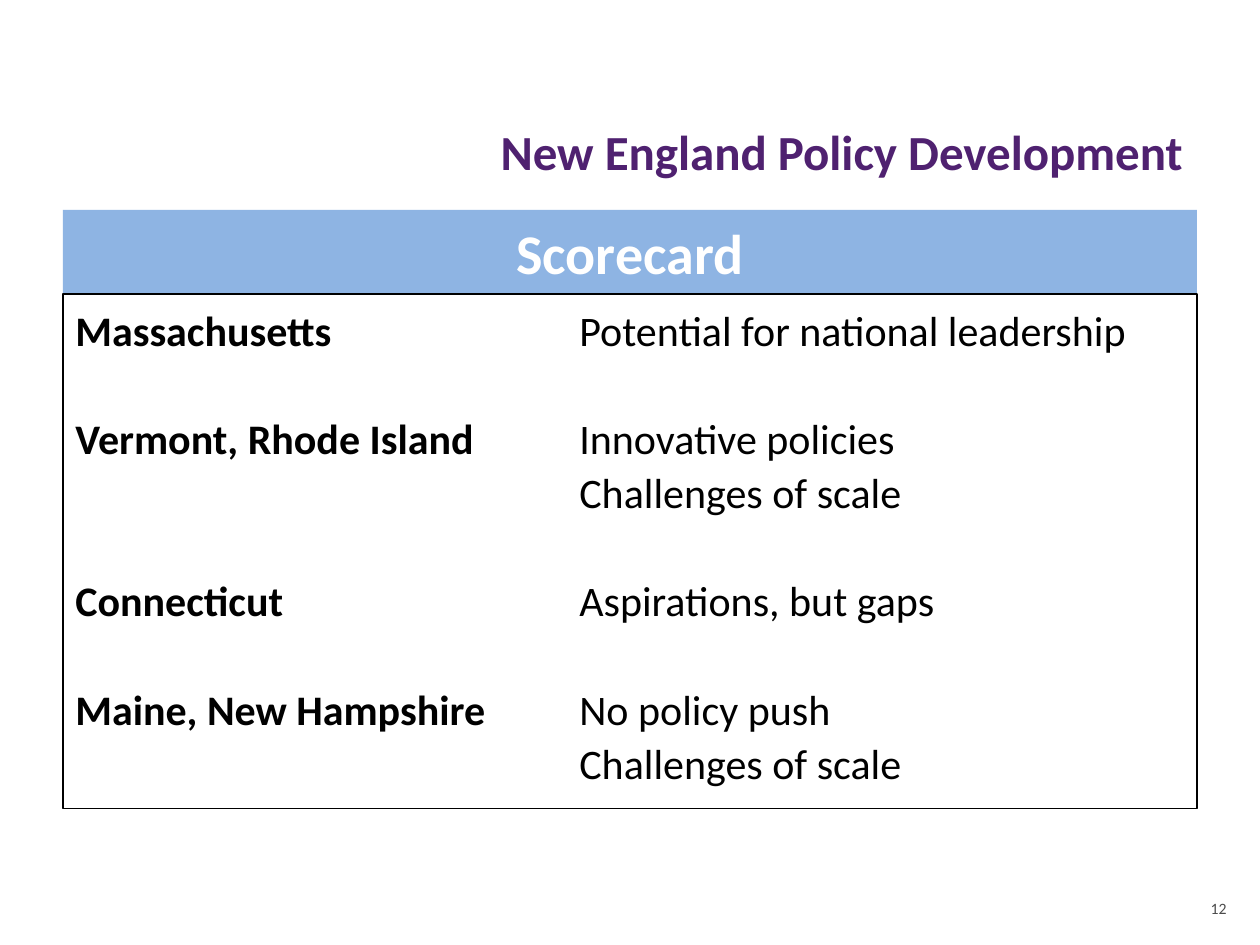
from dataclasses import dataclass

from lxml import etree
from pptx import Presentation
from pptx import util as u
from pptx.dml.color import RGBColor
from pptx.enum import shapes, text
from pptx.oxml.ns import qn

PURPLE = RGBColor(0x4F, 0x21, 0x70)
BLUE = RGBColor(0x8E, 0xB4, 0xE3)
WHITE = RGBColor(0xFF, 0xFF, 0xFF)
BLACK = RGBColor(0x00, 0x00, 0x00)
GREY = RGBColor(0x4C, 0x4C, 0x4C)

FONT = "Calibri"
CELL = u.Inches(1 / 12)
COLUMNS, ROWS = 120, 90
LINE_GAP = 2
GROUP_GAP = 33.2
VERDICT_TAB = u.Inches(4)


@dataclass(frozen=True)
class Area:
    column: float
    row: float
    columns: float
    rows: float

    def lengths(self) -> list[int]:
        return [round(n * CELL) for n in (self.column, self.row, self.columns, self.rows)]


@dataclass(frozen=True)
class Label:
    words: str
    area: Area
    size: float
    color: RGBColor
    align: text.PP_ALIGN
    bold: bool = False
    anchor: text.MSO_ANCHOR = text.MSO_ANCHOR.TOP
    fill: RGBColor | None = None


@dataclass(frozen=True)
class Score:
    states: str
    verdicts: tuple[str, ...]


LABELS = (
    Label("New England Policy Development", Area(13, 11, 100.8, 6), 28, PURPLE,
          text.PP_ALIGN.RIGHT, bold=True),
    Label("12", Area(86, 85, 32, 3), 9, GREY, text.PP_ALIGN.RIGHT),
    Label("Scorecard", Area(6, 20, 108, 8), 32, WHITE, text.PP_ALIGN.CENTER,
          bold=True, anchor=text.MSO_ANCHOR.MIDDLE, fill=BLUE),
)
SCORE_AREA = Area(6, 28, 108, 49)
SCORES = (
    Score("Massachusetts", ("Potential for national leadership",)),
    Score("Vermont, Rhode Island", ("Innovative policies", "Challenges of scale")),
    Score("Connecticut", ("Aspirations, but gaps",)),
    Score("Maine, New Hampshire", ("No policy push", "Challenges of scale")),
)


def set_font(font, size: float, color: RGBColor, bold: bool) -> None:
    font.name = FONT
    font.size = u.Pt(size)
    font.color.rgb = color
    font.bold = bold


def add_label(page, label: Label) -> None:
    if label.fill is None:
        box = page.shapes.add_textbox(*label.area.lengths())
    else:
        box = page.shapes.add_shape(shapes.MSO_SHAPE.RECTANGLE, *label.area.lengths())
        box.shadow.inherit = False
        box.fill.solid()
        box.fill.fore_color.rgb = label.fill
        box.line.fill.background()
    frame = box.text_frame
    frame.word_wrap = True
    frame.vertical_anchor = label.anchor
    frame.text = label.words
    para = frame.paragraphs[0]
    para.alignment = label.align
    set_font(para.runs[0].font, label.size, label.color, label.bold)


def add_tab(para, position: int) -> None:
    tabs = etree.SubElement(para._p.get_or_add_pPr(), qn("a:tabLst"))
    etree.SubElement(tabs, qn("a:tab"), pos=str(int(position)), algn="l")


def add_scores(page, area: Area, scores: tuple[Score, ...]) -> None:
    box = page.shapes.add_shape(shapes.MSO_SHAPE.RECTANGLE, *area.lengths())
    box.shadow.inherit = False
    box.fill.background()
    box.line.color.rgb = BLACK
    box.line.width = u.Pt(0.75)
    frame = box.text_frame
    frame.word_wrap = True
    frame.vertical_anchor = text.MSO_ANCHOR.TOP
    frame.margin_top = u.Inches(0.08)
    for group, score in enumerate(scores):
        for line, verdict in enumerate(score.verdicts):
            first = group == line == 0
            para = frame.paragraphs[0] if first else frame.add_paragraph()
            add_tab(para, VERDICT_TAB)
            para.alignment = text.PP_ALIGN.LEFT
            if not first:
                para.space_before = u.Pt(LINE_GAP if line else GROUP_GAP)
            if line == 0:
                span = para.add_run()
                span.text = score.states
                set_font(span.font, 24, BLACK, True)
            span = para.add_run()
            span.text = f"\t{verdict}"
            set_font(span.font, 24, BLACK, False)


def main() -> None:
    deck = Presentation()
    deck.slide_width = COLUMNS * CELL
    deck.slide_height = ROWS * CELL
    page = deck.slides.add_slide(deck.slide_layouts[6])
    for label in LABELS:
        add_label(page, label)
    add_scores(page, SCORE_AREA, SCORES)
    deck.save("out.pptx")


if __name__ == "__main__":
    main()
